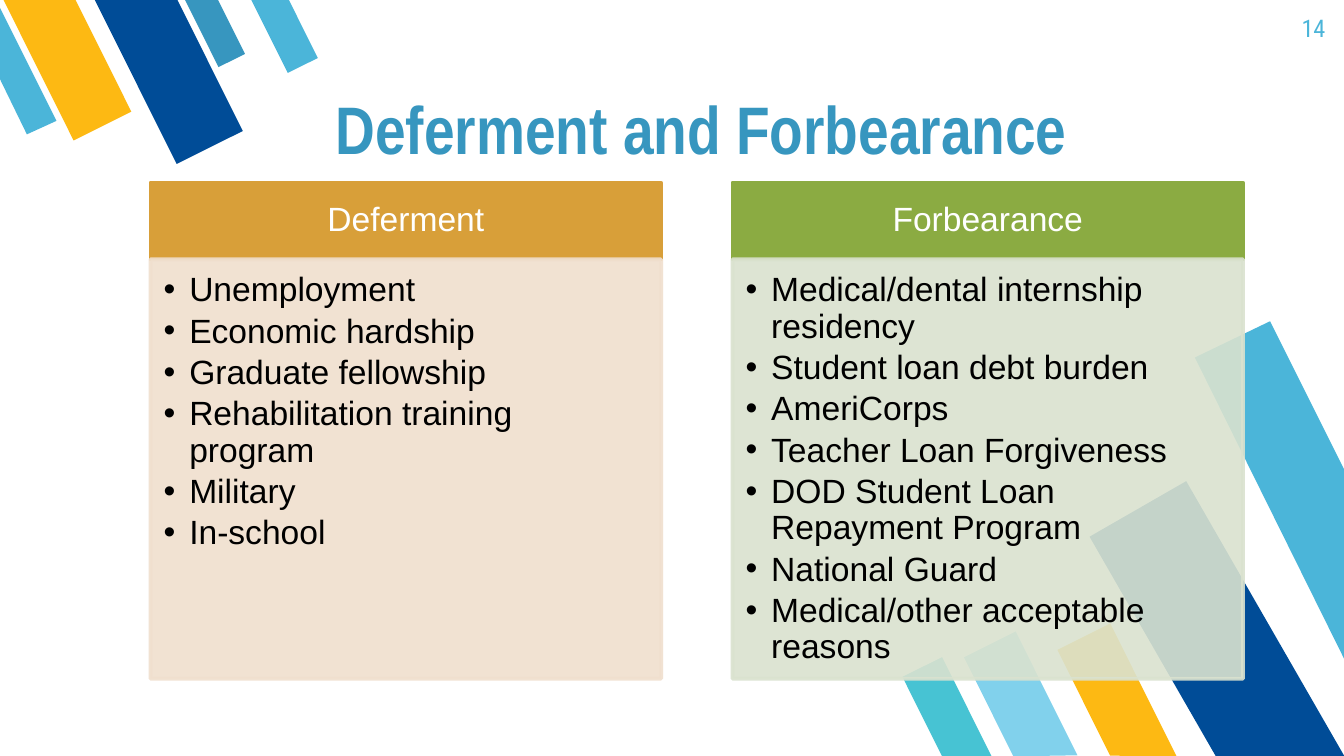
from lxml import etree
from pptx import Presentation
from pptx import util as u
from pptx.dml.color import RGBColor
from pptx.enum import shapes, text
from pptx.oxml.ns import qn

TITLE = "Deferment and Forbearance"
PAGE_NUMBER = "14"
COLUMNS = [
    {"heading": "Deferment", "strong": "D89F39", "pale": "F0DFCE",
     "items": ["Unemployment", "Economic hardship", "Graduate fellowship",
               "Rehabilitation training program", "Military", "In-school"]},
    {"heading": "Forbearance", "strong": "8BAB42", "pale": "DAE2CF",
     "items": ["Medical/dental internship residency", "Student loan debt burden",
               "AmeriCorps", "Teacher Loan Forgiveness",
               "DOD Student Loan Repayment Program", "National Guard",
               "Medical/other acceptable reasons"]},
]
THEME = {
    "teal": "3796BF", "sky": "4BB5D9", "pale_sky": "81D1EC", "aqua": "47C3D3",
    "gold": "FDB913", "navy": "004C97", "white": "FFFFFF", "black": "000000",
    "title": ("Arial Narrow", 36), "number": ("Roboto Condensed", 13),
    "body": ("Arial", 18),
}
# Bars: left, top, width, height, rotation, colour
BARS = [
    (1.49, -0.08, 0.22, 0.56, 333.5, "teal"),
    (0.26, -0.18, 0.48, 1.18, 333.5, "gold"),
    (0.98, -0.2, 0.55, 1.37, 333.5, "navy"),
    (1.99, -0.1, 0.25, 0.62, 333.5, "sky"),
    (7.38, 4.74, 0.43, 1.03, 153.5, "pale_sky"),
    (8.64, 3.63, 0.83, 2.36, 150.1, "navy"),
    (8.09, 4.68, 0.44, 1.1, 153.5, "gold"),
    (6.88, 4.92, 0.33, 0.82, 153.5, "aqua"),
]
# Bars cut off by the slide edge
CUT_BARS = [
    [(0.2, 1), (0.42, 0.9), (0, 0.06), (0, 0.59)],
    [(9.45, 2.39), (8.89, 2.66), (10, 4.9), (10, 3.49)],
]
SLIDE_WIDTH = 10
SLIDE_HEIGHT = SLIDE_WIDTH * 9 / 16
LEFT, TOP, COLUMN_WIDTH, COLUMN_STEP = 1.12, 1.36, 3.8, 4.33
HEADING_HEIGHT, LIST_HEIGHT = 0.57, 3.12
HANGING = 0.19

prs = Presentation()
prs.slide_width, prs.slide_height = u.Inches(SLIDE_WIDTH), u.Inches(SLIDE_HEIGHT)
slide = prs.slides.add_slide(prs.slide_layouts[6])


def inches(values):
    return [u.Inches(value) for value in values]


def paint(shape, colour, line=False):
    shape.shadow.inherit = False
    shape.fill.solid()
    shape.fill.fore_color.rgb = RGBColor.from_string(colour)
    if line:
        shape.line.color.rgb = RGBColor.from_string(colour)
        shape.line.width = u.Pt(2)
    else:
        shape.line.fill.background()


def set_opacity(shape, percent):
    for colour in shape._element.spPr.iter(qn("a:srgbClr")):
        etree.SubElement(colour, qn("a:alpha"), val=str(percent * 1000))


def write(shape, lines, style, colour, insets, anchor, bold=False, **paragraph_format):
    """Fill a shape with one paragraph per line; insets run left, top, right, bottom."""
    frame = shape.text_frame
    frame.word_wrap = True
    frame.vertical_anchor = anchor
    for side, inset in zip(("left", "top", "right", "bottom"), inches(insets)):
        setattr(frame, f"margin_{side}", inset)
    frame.text = "\n".join(lines)
    font, size = THEME[style]
    for paragraph in frame.paragraphs:
        for name, value in paragraph_format.items():
            setattr(paragraph, name, value)
        for run in paragraph.runs:
            for name, value in {"name": font, "size": u.Pt(size), "bold": bold}.items():
                setattr(run.font, name, value)
            run.font.color.rgb = RGBColor.from_string(THEME[colour])


def add_bullets(shape):
    for paragraph in shape.text_frame.paragraphs:
        properties = paragraph._p.get_or_add_pPr()
        properties.set("marL", str(u.Inches(HANGING)))
        properties.set("indent", str(-u.Inches(HANGING)))
        etree.SubElement(properties, qn("a:buFont"), typeface=THEME["body"][0])
        etree.SubElement(properties, qn("a:buChar"), char="•")


def add_bar(*box, rotation, colour):
    bar = slide.shapes.add_shape(
        shapes.MSO_SHAPE.FLOWCHART_MANUAL_INPUT, *inches(box))
    bar.rotation = rotation
    bar._element.spPr.xfrm.set("flipH", "1")
    paint(bar, THEME[colour])


def add_column(column, left):
    def add_panel(top, height, colour):
        panel = slide.shapes.add_shape(
            shapes.MSO_SHAPE.RECTANGLE, *inches((left, top, COLUMN_WIDTH, height)))
        paint(panel, colour, line=True)
        return panel

    heading = add_panel(TOP, HEADING_HEIGHT, column["strong"])
    write(heading, [column["heading"]], "body", "white", (0.14, 0.08, 0.14, 0.08),
          text.MSO_ANCHOR.MIDDLE, alignment=text.PP_ALIGN.CENTER, line_spacing=0.9)
    reasons = add_panel(TOP + HEADING_HEIGHT, LIST_HEIGHT, column["pale"])
    set_opacity(reasons, 90)
    write(reasons, column["items"], "body", "black", (0.1, 0.1, 0.14, 0.16),
          text.MSO_ANCHOR.TOP, alignment=text.PP_ALIGN.LEFT, line_spacing=0.9,
          space_after=u.Pt(2.7))
    add_bullets(reasons)


for *box, rotation, colour in BARS:
    add_bar(*box, rotation=rotation, colour=colour)
for corners in CUT_BARS:
    start, *others = [inches(corner) for corner in corners]
    outline = slide.shapes.build_freeform(*start)
    outline.add_line_segments(others, close=True)
    paint(outline.convert_to_shape(), THEME["sky"])

title = slide.shapes.add_textbox(*inches((1.12, 0.61, 8.2, 0.74)))
write(title, [TITLE], "title", "teal", [0.1] * 4, text.MSO_ANCHOR.BOTTOM,
      bold=True, alignment=text.PP_ALIGN.CENTER)
number = slide.shapes.add_textbox(*inches((9.36, 0, 0.6, 0.43)))
write(number, [PAGE_NUMBER], "number", "sky", [0.1] * 4, text.MSO_ANCHOR.TOP,
      alignment=text.PP_ALIGN.RIGHT)

for index, column in enumerate(COLUMNS):
    add_column(column, LEFT + index * COLUMN_STEP)

prs.save("out.pptx")
